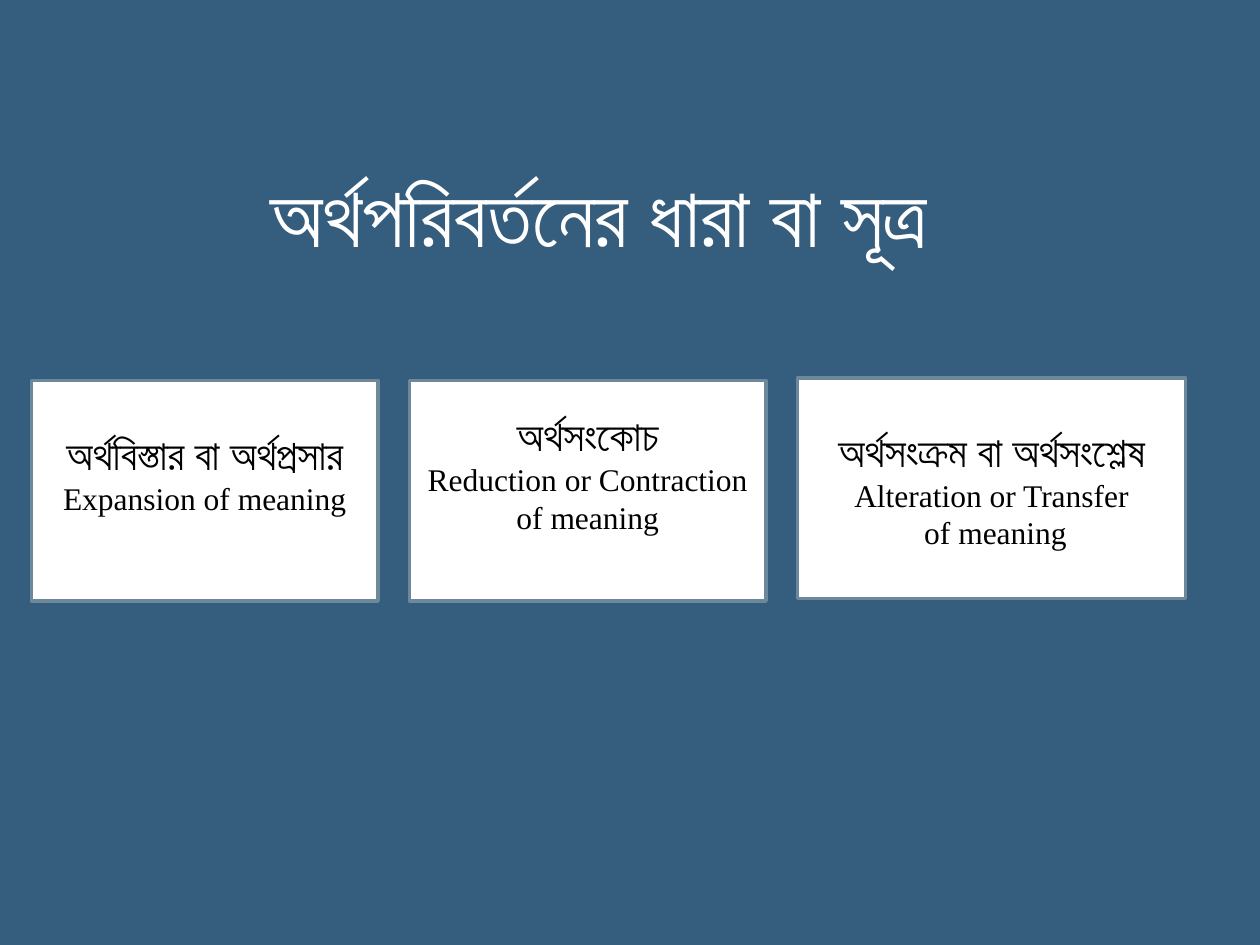
from pptx import Presentation
from pptx.dml.color import RGBColor
from pptx.enum.shapes import MSO_SHAPE
from pptx.enum.text import MSO_ANCHOR, PP_ALIGN
from pptx.util import Inches, Pt

PROCESS = MSO_SHAPE.FLOWCHART_PROCESS
MIDDLE = MSO_ANCHOR.MIDDLE
CENTER = PP_ALIGN.CENTER

BLUE = RGBColor(0x35, 0x5D, 0x7E)
GRAY = RGBColor(0x6D, 0x87, 0x9B)
WHITE = RGBColor(0xFF, 0xFF, 0xFF)
BLACK = RGBColor(0x00, 0x00, 0x00)

TITLE = {"name": "Calibri", "size": Pt(48)}
TERM = {"name": "Calibri", "size": Pt(24)}
GLOSS = {"name": "Times New Roman", "size": Pt(18)}

CARD_HEIGHT = 1.75
CARDS = [
    ((0.25, 3.02, 2.75, CARD_HEIGHT), 0.34,
     ["অর্থবিস্তার বা অর্থপ্রসার", "Expansion of meaning"]),
    ((3.25, 3.02, 2.83, CARD_HEIGHT), 0.34,
     ["অর্থসংকোচ", "Reduction or Contraction of meaning"]),
    ((6.33, 3, 3.08, CARD_HEIGHT), 0.05,
     ["অর্থসংক্রম বা অর্থসংশ্লেষ", "Alteration or Transfer", " of meaning"]),
]


def write_line(para, text, style, color):
    para.alignment = CENTER
    span = para.add_run()
    span.text = text
    for name, value in style.items():
        setattr(span.font, name, value)
    span.font.color.rgb = color


def add_title(page, place, text):
    box = page.shapes.add_textbox(*map(Inches, place))
    box.text_frame.word_wrap = True
    write_line(box.text_frame.paragraphs[0], text, TITLE, WHITE)


def add_card(page, place, bottom_margin, lines):
    card = page.shapes.add_shape(PROCESS, *map(Inches, place))
    card.shadow.inherit = False
    card.fill.solid()
    card.fill.fore_color.rgb = WHITE
    card.line.color.rgb = GRAY
    card.line.width = Pt(2)
    frame = card.text_frame
    layout = {
        "word_wrap": True,
        "vertical_anchor": MIDDLE,
        "margin_bottom": Inches(bottom_margin),
    }
    for name, value in layout.items():
        setattr(frame, name, value)
    for index, text in enumerate(lines):
        para = frame.add_paragraph() if index else frame.paragraphs[0]
        write_line(para, text, GLOSS if index else TERM, BLACK)


def main():
    deck = Presentation()
    deck.slide_width = Inches(10)
    deck.slide_height = Inches(7.5)
    page = deck.slides.add_slide(deck.slide_layouts[6])
    page.background.fill.solid()
    page.background.fill.fore_color.rgb = BLUE
    add_title(page, (0.79, 1.25, 7.92, 0.91), "অর্থপরিবর্তনের ধারা বা সূত্র")
    for place, bottom_margin, lines in CARDS:
        add_card(page, place, bottom_margin, lines)
    deck.save("out.pptx")


if __name__ == "__main__":
    main()
